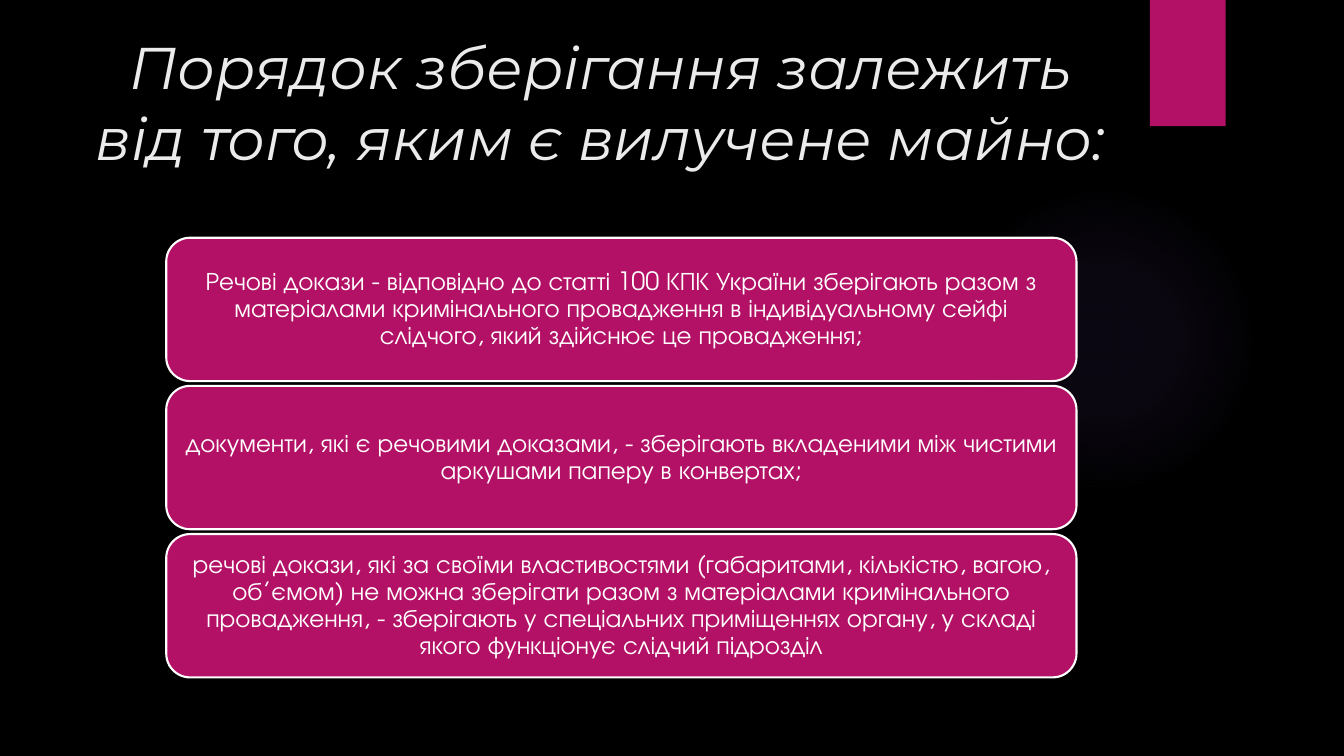
from lxml import etree
from pptx import Presentation
from pptx.dml.color import RGBColor
from pptx.enum import shapes, text
from pptx.oxml import parse_xml
from pptx.util import Cm, Pt

HUES = {"back": "000000", "pink": "B31166", "glow": "9B6BF2",
        "white": "FFFFFF", "head": "EBEBEB"}
KIND = shapes.MSO_SHAPE
NS = "http://schemas.openxmlformats.org/drawingml/2006/main"
HEAD = "Порядок зберігання залежить від того, яким є вилучене майно:"
CARDS = [
    "Речові докази - відповідно до статті\u00a0100 КПК України зберігають разом з "
    "матеріалами кримінального провадження в індивідуальному сейфі слідчого, "
    "який здійснює це провадження;",
    "документи, які є речовими доказами, - зберігають вкладеними між чистими "
    "аркушами паперу в конвертах;",
    "речові докази, які за своїми властивостями (габаритами, кількістю, вагою, "
    "об’ємом) не можна зберігати разом з матеріалами кримінального провадження, "
    "- зберігають у спеціальних приміщеннях органу, у складі якого функціонує "
    "слідчий підрозділ",
]


def hue(name):
    return RGBColor.from_string(HUES[name])


def apply(item, form):
    for key, val in form.items():
        setattr(item, key, val)


def write(shape, words, tint, inset, lead, font):
    frame = shape.text_frame
    apply(frame, {"text": words, "word_wrap": True,
                  "auto_size": text.MSO_AUTO_SIZE.NONE,
                  "vertical_anchor": text.MSO_ANCHOR.MIDDLE,
                  "margin_left": inset, "margin_right": inset,
                  "margin_top": inset, "margin_bottom": inset})
    para = frame.paragraphs[0]
    apply(para, {"alignment": text.PP_ALIGN.CENTER, "line_spacing": lead})
    run = para.runs[0]
    apply(run.font, font)
    run.font.color.rgb = hue(tint)


def block(slide, kind, box, tint):
    shape = slide.shapes.add_shape(kind, *map(Cm, box))
    shape.shadow.inherit = False
    shape.fill.solid()
    shape.fill.fore_color.rgb = hue(tint)
    shape.line.fill.background()
    return shape


def add_glow(slide, box):
    shape = block(slide, KIND.OVAL, box, "glow")
    stops = "".join(
        f'<a:gs pos="{pos}000"><a:srgbClr val="{HUES["glow"]}">'
        f'<a:alpha val="{alpha}000"/></a:srgbClr></a:gs>'
        for pos, alpha in [(0, 7), (36, 6), (69, 0), (100, 0)])
    grad = parse_xml(
        f'<a:gradFill xmlns:a="{NS}" rotWithShape="1"><a:gsLst>{stops}</a:gsLst>'
        '<a:path path="circle"><a:fillToRect l="50000" t="50000" r="50000" '
        'b="50000"/></a:path></a:gradFill>')
    props = shape.element.spPr
    props.replace(props.find(f"{{{NS}}}solidFill"), grad)


def add_tag(slide, box):
    shape = block(slide, KIND.RECTANGLE, box, "pink")
    list_ = shape.element.spPr.find(f"{{{NS}}}effectLst")
    shade = etree.SubElement(list_, f"{{{NS}}}outerShdw", blurRad=str(Pt(3)),
                             dist=str(Pt(2)), dir="5400000", rotWithShape="0")
    tint = etree.SubElement(shade, f"{{{NS}}}srgbClr", val=HUES["back"])
    etree.SubElement(tint, f"{{{NS}}}alpha", val="45000")


def add_head(slide, box):
    title = slide.shapes.title
    apply(title, dict(zip(("left", "top", "width", "height"), map(Cm, box))))
    write(title, HEAD, "head", Cm(0.25), 1.0,
          {"name": "Montserrat", "size": Pt(42), "italic": True})


def add_cards(slide, box, gap=0.12):
    left, top, width, height = box
    tall = (height - gap * (len(CARDS) - 1)) / len(CARDS)
    for row, words in enumerate(CARDS):
        spot = left, top + row * (tall + gap), width, tall
        card = block(slide, KIND.ROUNDED_RECTANGLE, spot, "pink")
        card.line.color.rgb = hue("white")
        card.line.width = Pt(1.5)
        write(card, words, "white", Cm(0.18), 0.9,
              {"name": "TeX Gyre Adventor", "size": Pt(18)})


def main():
    deck = Presentation()
    apply(deck, {"slide_width": Cm(33.87), "slide_height": Cm(19.05)})
    slide = deck.slides.add_slide(deck.slide_layouts[5])
    slide.background.fill.solid()
    slide.background.fill.fore_color.rgb = hue("back")
    add_glow(slide, (23.9, 4.65, 7.82, 7.82))
    add_tag(slide, (28.98, 0, 1.91, 3.18))
    add_cards(slide, (4.19, 5.99, 22.94, 11.08))
    add_head(slide, (2.06, 0.61, 26.14, 3.89))
    deck.save("out.pptx")


if __name__ == "__main__":
    main()
